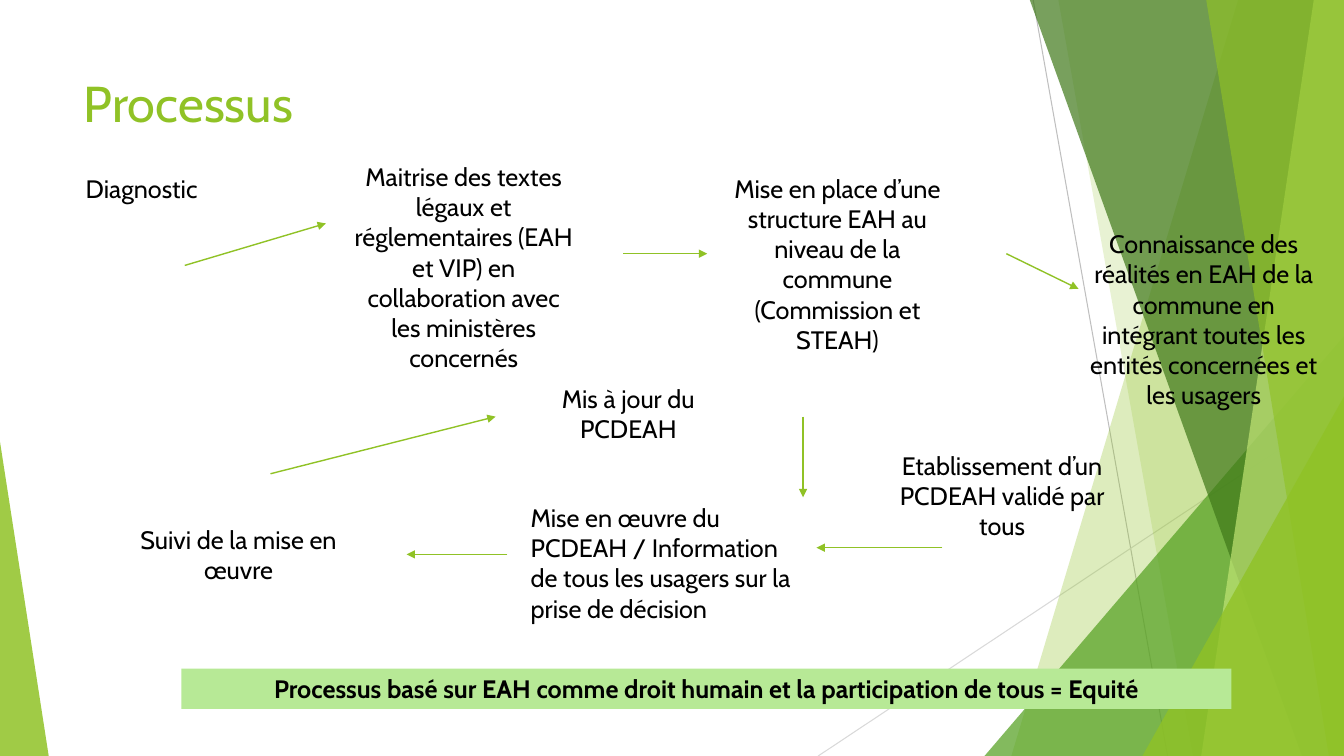
import pptx
import pptx.dml.color
import pptx.enum.shapes
import pptx.enum.text
import pptx.oxml
import pptx.oxml.ns
import pptx.util

RGB = pptx.dml.color.RGBColor
KIND = pptx.enum.shapes.MSO_SHAPE
ALIGN = pptx.enum.text.PP_ALIGN
ANCHOR = pptx.enum.text.MSO_ANCHOR

LIME = RGB(0x90, 0xC2, 0x26)
GREEN = RGB(0x54, 0xA0, 0x21)
DARK = RGB(0x3F, 0x78, 0x19)
PALE = RGB(0xC0, 0xE4, 0x74)
MINT = RGB(0xB7, 0xE9, 0x96)
GREY = RGB(0xBF, 0xBF, 0xBF)
SILVER = RGB(0xD9, 0xD9, 0xD9)
BLACK = RGB(0, 0, 0)

# The slide is a grid of 80 columns by 45 rows
COLS, ROWS = 80, 45
WIDE, HIGH = pptx.util.Inches(13.33), pptx.util.Inches(7.5)


class Page:
    """Holds the style and the current slide."""

    body = {"name": "Cabin", "size": pptx.util.Pt(18), "bold": False}
    head = {"name": "Cabin", "size": pptx.util.Pt(36), "bold": False}
    strong = {"name": "Cabin", "size": pptx.util.Pt(18), "bold": True}

    def __init__(self, deck):
        self.slide = deck.slides.add_slide(deck.slide_layouts[5])
        self.shapes = self.slide.shapes

    def grid(self, *cells):
        """Turn column, row, column, row... into lengths."""
        units = (WIDE / COLS, HIGH / ROWS)
        return [round(cell * units[i % 2]) for i, cell in enumerate(cells)]

    def add_xml(self, parent, tag, **attrs):
        node = pptx.oxml.parse_xml(f"<a:{tag} {pptx.oxml.ns.nsdecls('a')}/>")
        for key, value in attrs.items():
            node.set(key, str(value))
        parent.append(node)

    def paint(self, shape, color, share=100):
        shape.shadow.inherit = False
        shape.line.fill.background()
        shape.fill.solid()
        shape.fill.fore_color.rgb = color
        if share < 100:
            tint = shape.element.spPr.find(".//" + pptx.oxml.ns.qn("a:srgbClr"))
            self.add_xml(tint, "alpha", val=share * 1000)

    def label(self, shape, text, style, color=BLACK, align=ALIGN.CENTER,
              anchor=ANCHOR.TOP):
        frame = shape.text_frame
        frame.word_wrap = True
        frame.vertical_anchor = anchor
        para = frame.paragraphs[0]
        para.alignment = align
        run = para.add_run()
        run.text = text
        for key, value in style.items():
            setattr(run.font, key, value)
        run.font.color.rgb = color

    def title(self, text, box):
        shape = self.shapes.title
        for key, value in zip(("left", "top", "width", "height"), self.grid(*box)):
            setattr(shape, key, value)
        self.label(shape, text, self.head, LIME, ALIGN.LEFT)
        shape.element.getparent().append(shape.element)

    def note(self, text, box, align=ALIGN.CENTER):
        self.label(self.shapes.add_textbox(*self.grid(*box)), text, self.body, align=align)

    def band(self, text, box):
        shape = self.shapes.add_shape(KIND.RECTANGLE, *self.grid(*box))
        self.paint(shape, MINT)
        self.label(shape, text, self.strong, anchor=ANCHOR.MIDDLE)

    def panel(self, top, foot, color, share):
        """A slanted panel that reaches the right edge."""
        start, *rest = [self.grid(*spot) for spot in
                        ((top, 0), (COLS, 0), (COLS, ROWS), (foot, ROWS))]
        form = self.shapes.build_freeform(*start)
        form.add_line_segments(rest)
        self.paint(form.convert_to_shape(), color, share)

    def wedge(self, left, top, width, peak, color, share):
        """A triangle that stands on the bottom edge."""
        box = self.grid(left, top, width, ROWS - top)
        shape = self.shapes.add_shape(KIND.ISOSCELES_TRIANGLE, *box)
        shape.adjustments[0] = peak
        self.paint(shape, color, share)

    def line(self, ends, color=LIME, weight=1, arrow=True):
        link = self.shapes.add_connector(
            pptx.enum.shapes.MSO_CONNECTOR.STRAIGHT, *self.grid(*ends))
        link.line.color.rgb = color
        link.line.width = pptx.util.Pt(weight)
        props = link.element.spPr
        if arrow:
            self.add_xml(props.find(pptx.oxml.ns.qn("a:ln")), "tailEnd", type="triangle")
        self.add_xml(props, "effectLst")


def main():
    deck = pptx.Presentation()
    deck.slide_width, deck.slide_height = WIDE, HIGH
    page = Page(deck)

    # Backdrop
    page.line((61.5, 0, 69.5, ROWS), GREY, 0.75, arrow=False)
    page.line((COLS, 24.2, 48.7, ROWS), SILVER, 0.75, arrow=False)
    page.panel(73.7, 60.2, LIME, 30)
    page.panel(63, 71, LIME, 20)
    page.wedge(58.6, 20, 21.4, 1, GREEN, 72)
    page.panel(61.3, 77.5, DARK, 70)
    page.panel(78.2, 71.5, PALE, 70)
    page.panel(71.8, 79.1, LIME, 65)
    page.wedge(68, 23.6, 12, 1, LIME, 80)
    page.wedge(0, 26.3, 2.9, 0, LIME, 85)

    page.title("Processus", (4.4, 4, 56.4, 4.3))

    # Steps
    steps = [
        ("Diagnostic ", (4.4, 10, 8.4, 2.4)),
        ("Maitrise des textes légaux et réglementaires (EAH et VIP) en "
         "collaboration avec les ministères concernés", (20.3, 9.3, 14.6, 13.3)),
        ("Mise en place d’une structure EAH au niveau de la commune "
         "(Commission et STEAH)", (42.1, 10, 15.5, 11.5)),
        ("Connaissance des réalités en EAH de la commune en intégrant toutes "
         "les entités concernées et les usagers", (64.2, 13.3, 14.9, 11.5)),
        ("Etablissement d’un PCDEAH validé par tous", (52.6, 26.5, 14.1, 6.1)),
        ("Mise en œuvre du PCDEAH / Information de tous les usagers sur la "
         "prise de décision", (31, 29.6, 17.2, 7.9), ALIGN.LEFT),
        ("Suivi de la mise en œuvre", (6.2, 30.9, 16, 4.3)),
        ("Mis à jour du PCDEAH", (31, 22.5, 12.8, 4.3)),
    ]
    for step in steps:
        page.note(*step)

    # Arrows from step to step
    for ends in [
        (11, 15.8, 19.4, 13.3),
        (37.1, 15.1, 42.1, 15.1),
        (59.9, 15.1, 64.2, 17.2),
        (56.1, 32.6, 48.6, 32.6),
        (30.2, 33, 24.2, 33),
        (16.1, 28.2, 29.5, 24.8),
        (47.8, 24.8, 47.8, 29.6),
    ]:
        page.line(ends)

    # Closing band
    page.band("Processus basé sur EAH comme droit humain et la participation "
              "de tous = Equité", (10.8, 39.8, 62.5, 2.4))

    deck.save("out.pptx")


if __name__ == "__main__":
    main()
